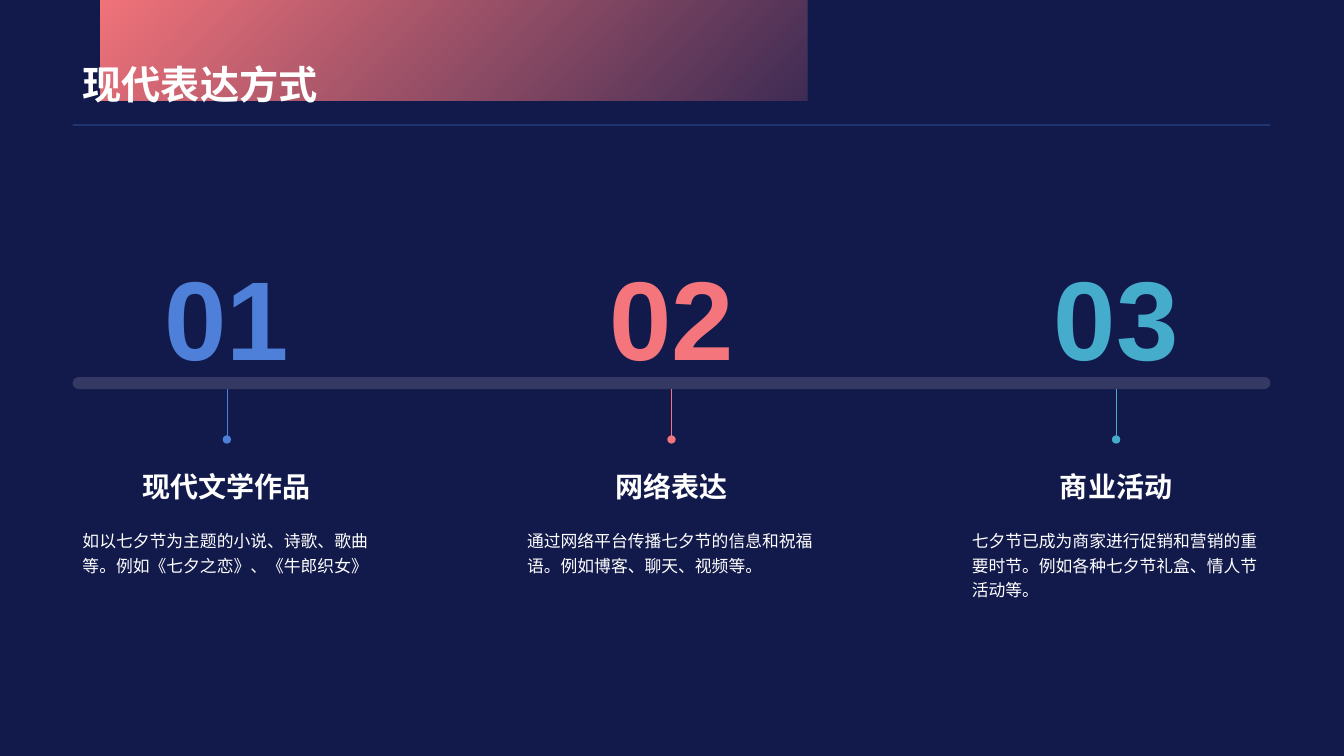
from pptx import Presentation
from pptx.dml.color import RGBColor
from pptx.enum.lang import MSO_LANGUAGE_ID as Language
from pptx.enum.shapes import MSO_CONNECTOR as Connector, MSO_SHAPE as Shape
from pptx.enum.text import MSO_ANCHOR as Anchor, MSO_AUTO_SIZE as AutoSize, PP_ALIGN as Align
from pptx.oxml.ns import qn
from pptx.oxml.xmlchemy import OxmlElement
from pptx.util import Inches, Pt

FONT = "Arial"
NAVY, WHITE, PALE = "121A4B", "FFFFFF", "F0F0F0"
BLUE, CORAL, TEAL = "4E80D9", "F4757B", "45ACCC"
LEFT, WIDTH = 0.72, 11.88
COLUMN_WIDTH, COLUMN_STEP = 3.06, 4.41
BAR_TOP, BAR_HEIGHT = 3.74, 0.12

STEPS = [
    ("现代文学作品", "如以七夕节为主题的小说、诗歌、歌曲等。例如《七夕之恋》、《牛郎织女》", BLUE, 0.56),
    ("网络表达", "通过网络平台传播七夕节的信息和祝福语。例如博客、聊天、视频等。", CORAL, 0.56),
    ("商业活动", "七夕节已成为商家进行促销和营销的重要时节。例如各种七夕节礼盒、情人节活动等。", TEAL, 0.81),
]

BANNER_START = (8.05, 0.67)
BANNER_CURVES = [
    ((7.86, 0.46), (7.71, 0.42), (7.56, 0.42)),
    ((7.4, 0.42), (7.26, 0.42), (7.26, 0.42)),
    ((0.94, 0.42), (0.94, 0.42), (0.94, 0.42)),
    ((0.82, 0.42), (0.72, 0.52), (0.72, 0.65)),
    ((0.72, 1.14), (0.72, 1.14), (0.72, 1.14)),
    ((8.63, 1.14), (8.63, 1.14), (8.63, 1.14)),
    ((8.38, 1.07), (8.23, 0.89), (8.05, 0.67)),
]


def color(value):
    return RGBColor.from_string(value)


def set_opacity(shape, percent):
    """Apply opacity to the last colour in the shape's properties."""
    last = shape._element.spPr.findall(".//" + qn("a:srgbClr"))[-1]
    alpha = OxmlElement("a:alpha")
    alpha.set("val", str(percent * 1000))
    last.append(alpha)


def curve_points(start, curves, pieces=16):
    """Sample joined cubic curves as points."""
    points = []
    for first, second, end in curves:
        for i in range(1, pieces + 1):
            t = i / pieces
            u = 1 - t
            points.append(tuple(
                u**3 * a + 3 * u * u * t * b + 3 * u * t * t * c + t**3 * d
                for a, b, c, d in zip(start, first, second, end)))
        start = end
    return points


def add_banner(page):
    builder = page.shapes.build_freeform(*BANNER_START, scale=Inches(1))
    builder.add_line_segments(curve_points(BANNER_START, BANNER_CURVES), close=True)
    banner = builder.convert_to_shape()
    banner.shadow.inherit = False
    banner.line.fill.background()
    banner.fill.gradient()
    banner.fill.gradient_angle = 315
    for stop in banner.fill.gradient_stops:
        stop.color.rgb = color(CORAL)
    set_opacity(banner, 10)


def add_line(page, start, end, line_color, width):
    line = page.shapes.add_connector(Connector.STRAIGHT, *map(Inches, start + end))
    line.line.color.rgb = color(line_color)
    line.line.width = Pt(width)
    line._element.spPr.append(OxmlElement("a:effectLst"))
    return line


def add_dot_end(line):
    tail = OxmlElement("a:tailEnd")
    tail.set("type", "oval")
    line.line._get_or_add_ln().append(tail)


def add_bar(page):
    bar = page.shapes.add_shape(
        Shape.ROUNDED_RECTANGLE, *map(Inches, (LEFT, BAR_TOP, WIDTH, BAR_HEIGHT)))
    bar.adjustments[0] = 0.5
    bar.shadow.inherit = False
    bar.line.fill.background()
    bar.fill.solid()
    bar.fill.fore_color.rgb = color(PALE)
    set_opacity(bar, 15)


def write(box, text, size, text_color=WHITE, bold=True, align=Align.CENTER,
          anchor=Anchor.BOTTOM, wrap=True, spacing=1.0):
    frame = box.text_frame
    frame.text = text
    frame.word_wrap = wrap
    frame.auto_size = AutoSize.NONE
    frame.vertical_anchor = anchor
    para = frame.paragraphs[0]
    para.alignment = align
    para.line_spacing = spacing
    font = para.runs[0].font
    font.name, font.size, font.bold = FONT, Pt(size), bold
    font.color.rgb = color(text_color)
    font.language_id = Language.SIMPLIFIED_CHINESE
    east_asian = OxmlElement("a:ea")
    east_asian.set("typeface", FONT)
    font._element.append(east_asian)


def add_text(page, place, text, size, **style):
    write(page.shapes.add_textbox(*map(Inches, place)), text, size, **style)


def add_title(page, text):
    title = page.shapes.title
    title.left, title.top, title.width, title.height = map(Inches, (LEFT, 0, WIDTH, 1.12))
    write(title, text, 28, align=Align.LEFT)
    page.shapes._spTree.append(title._element)  # bring in front of the banner


def add_step(page, index, heading, body, accent, body_height):
    left = LEFT + index * COLUMN_STEP
    center = left + COLUMN_WIDTH / 2
    add_text(page, (center - 0.725, 2.41, 1.45, 1.45), f"{index + 1:02}", 80,
             text_color=accent, anchor=Anchor.MIDDLE, wrap=False)
    stem_top = BAR_TOP + BAR_HEIGHT
    add_dot_end(add_line(page, (center, stem_top), (center, stem_top + 0.5), accent, 0.5))
    add_text(page, (left, 4.67, COLUMN_WIDTH, 0.37), heading, 20)
    add_text(page, (left, 5.18, COLUMN_WIDTH, body_height), body, 12, bold=False,
             align=Align.LEFT, anchor=Anchor.TOP, spacing=1.2)


def main():
    deck = Presentation()
    deck.slide_width, deck.slide_height = Inches(13.33), Inches(7.5)
    page = deck.slides.add_slide(deck.slide_layouts[5])
    page.background.fill.solid()
    page.background.fill.fore_color.rgb = color(NAVY)

    add_banner(page)
    rule = add_line(page, (LEFT, 1.24), (LEFT + WIDTH, 1.24), BLUE, 1)
    set_opacity(rule, 40)
    add_title(page, "现代表达方式")
    add_bar(page)
    for index, step in enumerate(STEPS):
        add_step(page, index, *step)
    deck.save("out.pptx")


if __name__ == "__main__":
    main()
